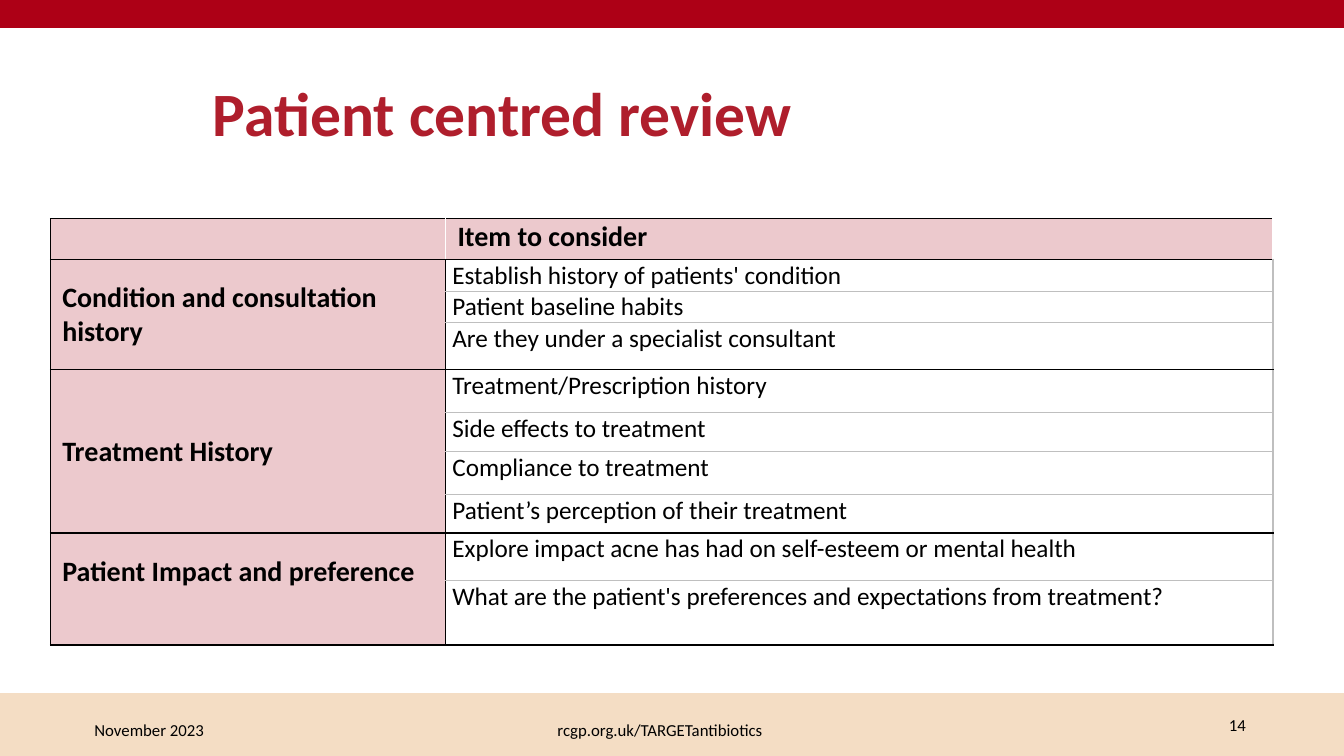
from lxml import etree
from pptx import Presentation
from pptx.dml.color import RGBColor
from pptx.enum.shapes import MSO_SHAPE
from pptx.enum.text import MSO_ANCHOR, PP_ALIGN
from pptx.oxml.ns import qn
from pptx.util import Cm, Pt

RECTANGLE = MSO_SHAPE.RECTANGLE
TOP, MIDDLE = MSO_ANCHOR.TOP, MSO_ANCHOR.MIDDLE
LEFT, CENTER, RIGHT = PP_ALIGN.LEFT, PP_ALIGN.CENTER, PP_ALIGN.RIGHT

BLACK = RGBColor(0x00, 0x00, 0x00)
WHITE = RGBColor(0xFF, 0xFF, 0xFF)
GREY = RGBColor(0xBF, 0xBF, 0xBF)
PINK = RGBColor(0xEC, 0xC9, 0xCD)
SAND = RGBColor(0xF4, 0xDD, 0xC4)
BAND_RED = RGBColor(0xAD, 0x00, 0x16)
TITLE_RED = RGBColor(0xAF, 0x1E, 0x2C)

TITLE_FORMAT = {"size": Pt(44), "bold": True}
HEADING_FORMAT = {"size": Pt(20), "bold": True}
ITEM_FORMAT = {"size": Pt(18), "bold": False}
FOOTER_FORMAT = {"size": Pt(12), "bold": False}

HEADING_INDENT = Cm(0.3)
ITEM_INDENT = Cm(0.17)
COLUMN_WIDTHS = [9.96, 20.85]
ROW_HEIGHTS = [0.91, 0.78, 0.78, 1.18, 1.09, 0.97, 1.09, 0.97, 1.2, 1.62]
SECTIONS = [
    ("Condition and consultation history", Cm(0), [
        "Establish history of patients' condition",
        "Patient baseline habits",
        "Are they under a specialist consultant",
    ]),
    ("Treatment History", Cm(0), [
        "Treatment/Prescription history",
        "Side effects to treatment",
        "Compliance to treatment",
        "Patient’s perception of their treatment",
    ]),
    ("Patient Impact and preference", Cm(0.86), [
        "Explore impact acne has had on self-esteem or mental health",
        "What are the patient's preferences and expectations from treatment?",
    ]),
]


def write_text(text_frame, text, text_format, color=BLACK, alignment=LEFT):
    paragraph = text_frame.paragraphs[0]
    paragraph.text = text
    paragraph.alignment = alignment
    font = paragraph.runs[0].font
    font.name = "Calibri"
    font.color.rgb = color
    for name, value in text_format.items():
        setattr(font, name, value)


def add_band(slide, top, height, color):
    shape = slide.shapes.add_shape(RECTANGLE, 0, Cm(top), Cm(33.87), Cm(height))
    shape.shadow.inherit = False
    shape.fill.solid()
    shape.fill.fore_color.rgb = color
    shape.line.color.rgb = color
    shape.line.width = Pt(1)


def add_title(slide, text):
    title = slide.shapes.title
    title.left, title.top = Cm(5.11), Cm(1.09)
    title.width, title.height = Cm(26.97), Cm(3.68)
    title.text_frame.vertical_anchor = MIDDLE
    title.text_frame.word_wrap = True
    write_text(title.text_frame, text, TITLE_FORMAT, TITLE_RED)
    title.text_frame.paragraphs[0].line_spacing = 0.9


def add_footer(slide, text, left, width, alignment, anchor):
    box = slide.shapes.add_textbox(Cm(left), Cm(17.88), Cm(width), Cm(1.02))
    text_frame = box.text_frame
    text_frame.word_wrap = True
    text_frame.vertical_anchor = anchor
    if alignment == RIGHT:
        text_frame.margin_right = Cm(0.35)
    write_text(text_frame, text, FOOTER_FORMAT, alignment=alignment)


def style_cell(cell, fill, left, right, top, bottom):
    properties = cell._tc.get_or_add_tcPr()
    edges = {"a:lnL": left, "a:lnR": right, "a:lnT": top, "a:lnB": bottom}
    for tag, color in edges.items():
        line = etree.SubElement(properties, qn(tag), w=str(Pt(1)))
        solid = etree.SubElement(line, qn("a:solidFill"))
        etree.SubElement(solid, qn("a:srgbClr"), val=str(color))
    cell.fill.solid()
    cell.fill.fore_color.rgb = fill


def write_cell(cell, text, text_format, indent, anchor=TOP, margin_bottom=Cm(0)):
    cell_format = {
        "margin_left": indent,
        "margin_right": Cm(0.02),
        "margin_top": Cm(0.02),
        "margin_bottom": margin_bottom,
        "vertical_anchor": anchor,
    }
    for name, value in cell_format.items():
        setattr(cell, name, value)
    write_text(cell.text_frame, text, text_format)


def add_section(table, first, heading, margin_bottom, items):
    last = first + len(items) - 1
    for row, item in enumerate(items, first):
        style_cell(table.cell(row, 0), PINK, BLACK, BLACK, BLACK, BLACK)
        cell = table.cell(row, 1)
        top = BLACK if row == first else GREY
        bottom = BLACK if row == last else GREY
        style_cell(cell, WHITE, BLACK, GREY, top, bottom)
        write_cell(cell, item, ITEM_FORMAT, ITEM_INDENT)
    section = table.cell(first, 0)
    section.merge(table.cell(last, 0))
    write_cell(section, heading, HEADING_FORMAT, HEADING_INDENT, MIDDLE, margin_bottom)


def add_review_table(slide):
    frame = slide.shapes.add_table(
        len(ROW_HEIGHTS), len(COLUMN_WIDTHS), Cm(1.27), Cm(5.51),
        Cm(sum(COLUMN_WIDTHS)), Cm(sum(ROW_HEIGHTS)))
    table = frame.table
    table.first_row = False
    table.horz_banding = False
    for column, width in zip(table.columns, COLUMN_WIDTHS):
        column.width = Cm(width)
    for row, height in zip(table.rows, ROW_HEIGHTS):
        row.height = Cm(height)

    style_cell(table.cell(0, 0), PINK, BLACK, WHITE, BLACK, BLACK)
    style_cell(table.cell(0, 1), PINK, WHITE, WHITE, BLACK, BLACK)
    write_cell(table.cell(0, 1), "Item to consider", HEADING_FORMAT, HEADING_INDENT)
    first = 1
    for heading, margin_bottom, items in SECTIONS:
        add_section(table, first, heading, margin_bottom, items)
        first += len(items)


def main():
    presentation = Presentation()
    presentation.slide_width = Cm(33.87)
    presentation.slide_height = Cm(19.05)
    slide = presentation.slides.add_slide(presentation.slide_layouts[5])
    add_band(slide, 17.48, 1.57, SAND)
    add_band(slide, -0.02, 0.71, BAND_RED)
    add_title(slide, "Patient centred review")
    add_review_table(slide)
    add_footer(slide, "14", 24.13, 7.62, RIGHT, TOP)
    add_footer(slide, "November 2023", 2.13, 7.62, LEFT, MIDDLE)
    add_footer(slide, "rcgp.org.uk/TARGETantibiotics", 10.92, 11.43, CENTER, MIDDLE)
    presentation.save("out.pptx")


if __name__ == "__main__":
    main()
